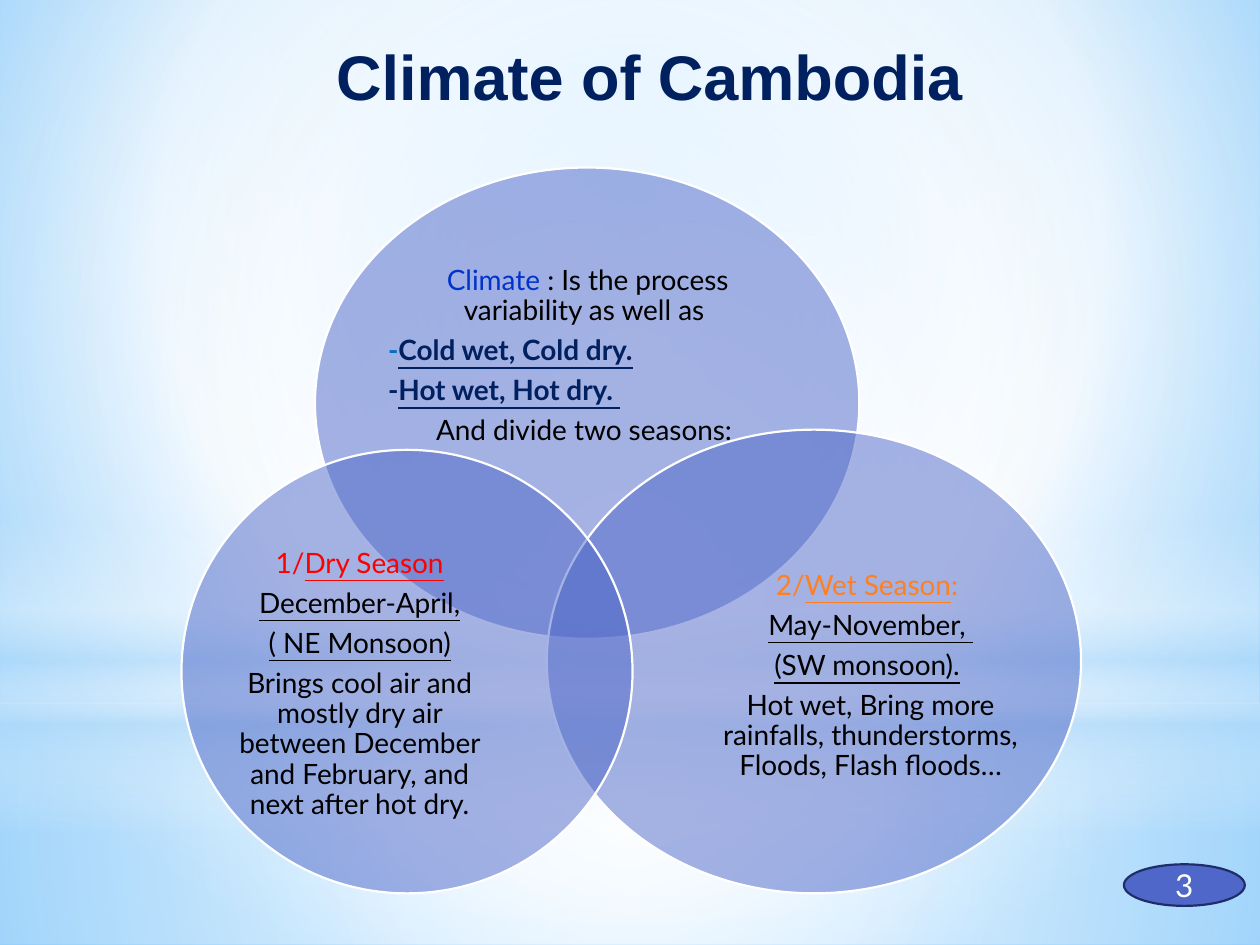
from pptx import Presentation
from pptx.dml.color import RGBColor
from pptx.enum.shapes import MSO_SHAPE as Shape
from pptx.enum.text import MSO_ANCHOR as Anchor, PP_ALIGN as Align
from pptx.oxml import parse_xml
from pptx.oxml.ns import nsdecls, qn
from pptx.util import Pt

PX = 9144  # 100 px to the inch
THEME = dict(
    sky="9ED5FF", deep="5BB9FF", mist="B4DCFA", white="FFFFFF", black="000000",
    circle="4E67C8", badge_line="1F2E69", navy="002060", blue="0033CC",
    dash="0070C0", red="FF0000", orange="FF8021",
    body="Lato", heading="Arial", title_size=36, number_size=18, body_size=16,
)


def set_gradient(fill, root, stops, centre=None):
    """Fill from (position, colour, opacity) stops: circular around centre, else top to bottom."""
    fill.solid()
    solid = root.find(".//" + qn("a:solidFill"))
    gs = "".join(
        f'<a:gs pos="{pos * 1000}"><a:srgbClr val="{THEME[name]}">'
        f'<a:alpha val="{opacity * 1000}"/></a:srgbClr></a:gs>'
        for pos, name, opacity in stops)
    if centre:
        sides = " ".join(f'{k}="{v * 1000}"' for k, v in zip("ltrb", centre))
        way = f'<a:path path="circle"><a:fillToRect {sides}/></a:path>'
    else:
        way = '<a:lin ang="5400000" scaled="0"/>'
    solid.getparent().replace(solid, parse_xml(
        f'<a:gradFill {nsdecls("a")} rotWithShape="1"><a:gsLst>{gs}</a:gsLst>{way}</a:gradFill>'))


def add_text(p, text, *, color, size=THEME["body_size"], font=THEME["body"],
             bold=False, underline=False):
    r = p.add_run()
    r.text = text
    r.font.name, r.font.size = font, Pt(size)
    r.font.bold, r.font.underline = bold, underline
    r.font.color.rgb = RGBColor.from_string(THEME[color])


prs = Presentation()
prs.slide_width, prs.slide_height = 1000 * PX, 750 * PX
s = prs.slides.add_slide(prs.slide_layouts[6])

# Backdrop: a sky gradient under four soft glows
set_gradient(s.background.fill, s.element,
             [(0, "sky", 100), (60, "white", 100), (100, "deep", 100)], (20, 10, 20, 60))
MIDDLE = (50, 50, 50, 50)
glows = [
    (Shape.RECTANGLE, 558, 192, MIDDLE,
     [(0, "white", 91), (37, "white", 76), (100, "mist", 79)]),
    (Shape.RECTANGLE, 0, 558, MIDDLE,
     [(0, "white", 89), (48, "white", 62), (100, "mist", 79)]),
    (Shape.RECTANGLE, 412, 250, None,
     [(0, "white", 0), (29, "white", 30), (45, "mist", 40),
      (55, "white", 26), (65, "mist", 60), (100, "white", 0)]),
    (Shape.OVAL, 175, 558, MIDDLE, [(0, "white", 100), (56, "white", 0)]),
]
for kind, top, height, centre, stops in glows:
    sp = s.shapes.add_shape(kind, 0, top * PX, 1000 * PX, height * PX)
    sp.shadow.inherit = False
    sp.line.fill.background()
    set_gradient(sp.fill, sp.element, stops, centre)

# Venn diagram: circle box, text box, paragraphs of (alignment, runs)
PLAIN = dict(color="black")
LINED = dict(color="black", underline=True)
STRONG = dict(color="navy", bold=True)
circles = [
    ((250, 133, 432, 374), (308, 199, 317, 168), [
        (Align.CENTER, [("Climate", dict(color="blue")),
                        (" : Is the process variability as well as ", PLAIN)]),
        (Align.JUSTIFY, [("-", dict(color="dash", bold=True)),
                         ("Cold wet, Cold dry.", dict(STRONG, underline=True))]),
        (Align.JUSTIFY, [("-", STRONG),
                         ("Hot wet, Hot dry. ", dict(STRONG, underline=True))]),
        (Align.CENTER, [("And divide two seasons: ", PLAIN)]),
    ]),
    ((434, 341, 424, 368), (564, 436, 254, 202), [
        (Align.CENTER, [("2/", dict(color="orange")),
                        ("Wet Season", dict(color="orange", underline=True)),
                        (": ", dict(color="orange"))]),
        (Align.CENTER, [("May-November, ", LINED)]),
        (Align.CENTER, [("(SW monsoon).", LINED), (" ", PLAIN)]),
        (Align.CENTER, [("Hot wet, Bring more rainfalls, thunderstorms, "
                         "Floods, Flash floods…", PLAIN)]),
    ]),
    ((144, 357, 358, 352), (178, 447, 215, 193), [
        (Align.CENTER, [("1/", dict(color="red")),
                        ("Dry Season", dict(color="red", underline=True))]),
        (Align.CENTER, [("December-April,", LINED)]),
        (Align.CENTER, [("( NE Monsoon)", LINED)]),
        (Align.CENTER, [("Brings cool air and mostly dry air between December "
                         "and February, and next after hot dry.", PLAIN)]),
    ]),
]
venn = s.shapes.add_group_shape()
for circle_box, text_box, paragraphs in circles:
    sp = venn.shapes.add_shape(Shape.OVAL, *(v * PX for v in circle_box))
    sp.shadow.inherit = False
    sp.fill.solid()
    sp.fill.fore_color.rgb = RGBColor.from_string(THEME["circle"])
    sp.element.find(".//" + qn("a:srgbClr")).append(
        parse_xml(f'<a:alpha {nsdecls("a")} val="50000"/>'))
    sp.line.color.rgb = RGBColor.from_string(THEME["white"])
    sp.line.width = Pt(1.25)

    tf = venn.shapes.add_textbox(*(v * PX for v in text_box)).text_frame
    tf.word_wrap = True
    tf.vertical_anchor = Anchor.MIDDLE
    tf.margin_left = tf.margin_top = tf.margin_right = tf.margin_bottom = 0
    for i, (align, runs) in enumerate(paragraphs):
        p = tf.add_paragraph() if i else tf.paragraphs[0]
        p.alignment = align
        p.line_spacing = 0.9
        p.space_after = Pt(0.35 * THEME["body_size"])
        for text, style in runs:
            add_text(p, text, **style)

# Title
tf = s.shapes.add_textbox(183 * PX, 25 * PX, 665 * PX, 131 * PX).text_frame
tf.word_wrap = True
p = tf.paragraphs[0]
p.alignment = Align.CENTER
add_text(p, "Climate of Cambodia", color="navy", size=THEME["title_size"],
         font=THEME["heading"], bold=True)

# Slide number badge
sp = s.shapes.add_shape(Shape.OVAL, 892 * PX, 686 * PX, 96 * PX, 33 * PX)
sp.shadow.inherit = False
sp.fill.solid()
sp.fill.fore_color.rgb = RGBColor.from_string(THEME["circle"])
sp.line.color.rgb = RGBColor.from_string(THEME["badge_line"])
sp.line.width = Pt(1.25)
tf = sp.text_frame
tf.vertical_anchor = Anchor.MIDDLE
p = tf.paragraphs[0]
p.alignment = Align.CENTER
add_text(p, "3", color="white", size=THEME["number_size"])

prs.save("out.pptx")
